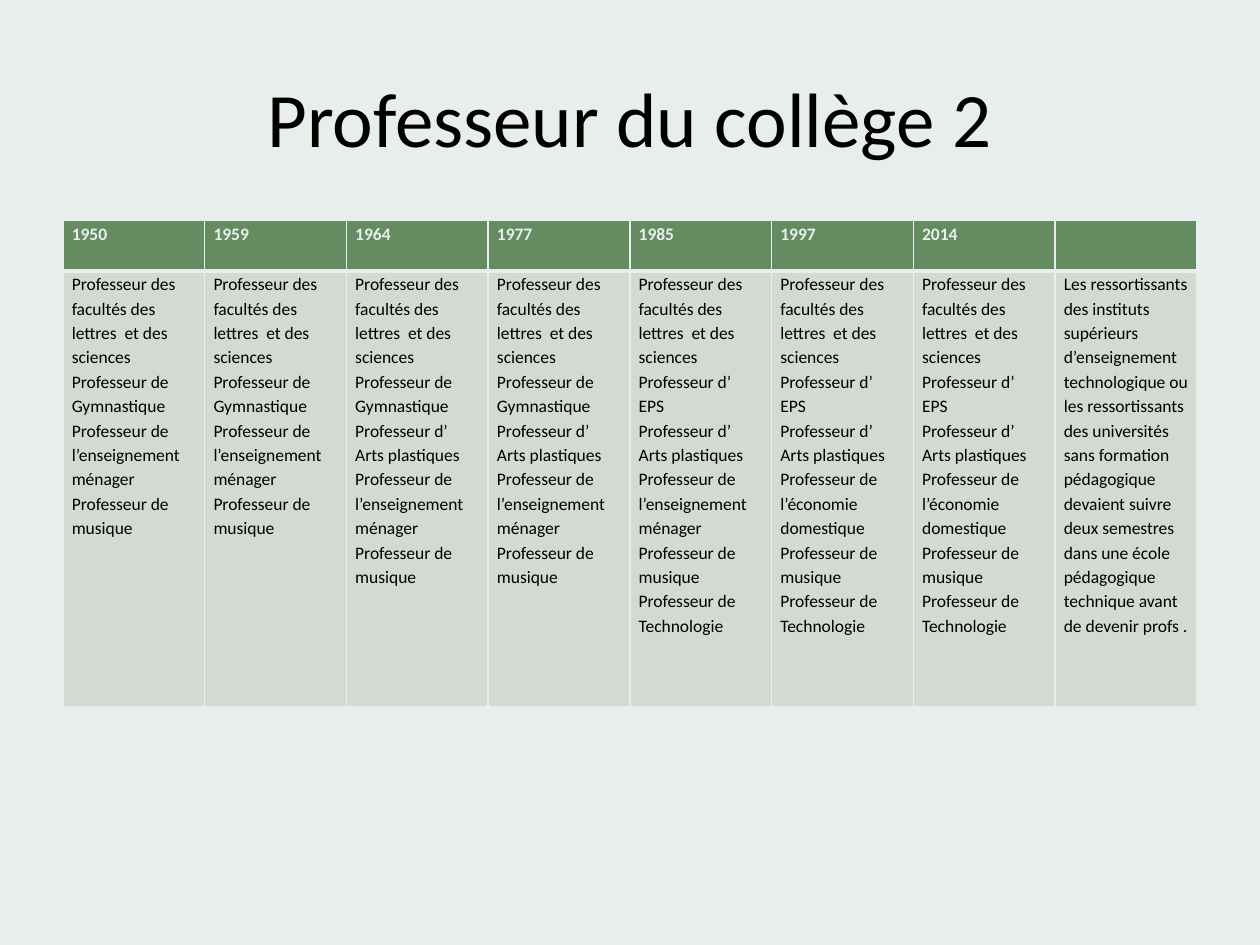
from lxml import etree
from pptx import Presentation
from pptx import util as u
from pptx.dml.color import RGBColor
from pptx.enum import text
from pptx.oxml import ns

WIDTH, HEIGHT = u.Inches(10), u.Inches(7.5)
MARGIN = 0.05  # share of the slide's width
FONT = "Calibri"
COLORS = {"background": "E8EEEE", "header": "648C60", "body": "D3DAD2", "ink": "000000"}

FACULTIES = "Professeur des facultés des lettres  et des sciences"
GYMNASTICS = "Professeur de Gymnastique"
SPORT = "Professeur d’  EPS"
ARTS = "Professeur d’  Arts plastiques"
HOUSEKEEPING = "Professeur de l’enseignement ménager"
HOME_ECONOMICS = "Professeur de l’économie domestique"
MUSIC = "Professeur de musique"
TECHNOLOGY = "Professeur de Technologie"
EARLY = [FACULTIES, GYMNASTICS, HOUSEKEEPING, MUSIC]
RECENT = [FACULTIES, SPORT, "Professeur d’ Arts plastiques", HOME_ECONOMICS,
          f"{MUSIC} {TECHNOLOGY}"]
REMARK = ("Les ressortissants des instituts supérieurs d’enseignement technologique "
          "ou les ressortissants des universités sans formation pédagogique devaient "
          "suivre deux semestres dans une école pédagogique technique avant de devenir "
          "profs .")
COLUMNS = [
    ("1950", EARLY),
    ("1959", EARLY),
    ("1964", [FACULTIES, GYMNASTICS, f"{ARTS} {HOUSEKEEPING}", MUSIC]),
    ("1977", [FACULTIES, GYMNASTICS, ARTS, HOUSEKEEPING, MUSIC]),
    ("1985", [FACULTIES, SPORT, ARTS, HOUSEKEEPING, MUSIC, TECHNOLOGY]),
    ("1997", RECENT),
    ("2014", RECENT),
    ("", [REMARK]),
]


def rgb(name):
    return RGBColor.from_string(COLORS[name])


def set_font(paragraph, size, color, bold=False):
    font = paragraph.font
    font.name, font.size, font.bold = FONT, u.Pt(size), bold
    font.color.rgb = rgb(color)


def add_title(slide, title):
    box = slide.shapes.add_textbox(int(WIDTH * MARGIN), int(HEIGHT * 0.04),
                                   int(WIDTH * (1 - 2 * MARGIN)), u.Inches(1.25))
    frame = box.text_frame
    frame.word_wrap = True
    frame.vertical_anchor = text.MSO_ANCHOR.MIDDLE
    paragraph = frame.paragraphs[0]
    paragraph.text = title
    paragraph.alignment = text.PP_ALIGN.CENTER
    set_font(paragraph, 44, "ink")


def set_borders(cell, widths):
    """Draw the cell's edges; widths maps L, R, T and B to points."""
    properties = cell._tc.get_or_add_tcPr()
    for position, (side, width) in enumerate(widths.items()):
        line = etree.Element(ns.qn(f"a:ln{side}"), w=str(u.Pt(width)))
        fill = etree.SubElement(line, ns.qn("a:solidFill"))
        etree.SubElement(fill, ns.qn("a:srgbClr"), val=COLORS["background"])
        properties.insert(position, line)


def fill_cell(cell, lines, fill, color, bold, borders):
    cell.margin_left = cell.margin_right = u.Inches(0.07)
    cell.margin_top = cell.margin_bottom = 0
    cell.fill.solid()
    cell.fill.fore_color.rgb = rgb(fill)
    set_borders(cell, borders)
    cell.text = "\n".join(lines)
    for paragraph in cell.text_frame.paragraphs:
        paragraph.line_spacing = 1.15
        set_font(paragraph, 10, color, bold)


def add_history_table(slide, columns):
    header_height, body_height = u.Inches(0.4), u.Inches(3.46)
    frame = slide.shapes.add_table(2, len(columns), int(WIDTH * MARGIN), u.Inches(1.75),
                                   int(WIDTH * (1 - 2 * MARGIN)),
                                   header_height + body_height)
    table = frame.table
    table.rows[0].height, table.rows[1].height = header_height, body_height
    for index, (year, teachers) in enumerate(columns):
        fill_cell(table.cell(0, index), [year], "header", "background", True,
                  {"L": 1, "R": 1, "T": 1, "B": 3})
        fill_cell(table.cell(1, index), teachers, "body", "ink", False,
                  {"L": 1, "R": 1, "T": 3, "B": 1})


def main():
    presentation = Presentation()
    presentation.slide_width, presentation.slide_height = WIDTH, HEIGHT
    slide = presentation.slides.add_slide(presentation.slide_layouts[6])
    slide.background.fill.solid()
    slide.background.fill.fore_color.rgb = rgb("background")
    add_title(slide, "Professeur du collège 2")
    add_history_table(slide, COLUMNS)
    presentation.save("out.pptx")


if __name__ == "__main__":
    main()
